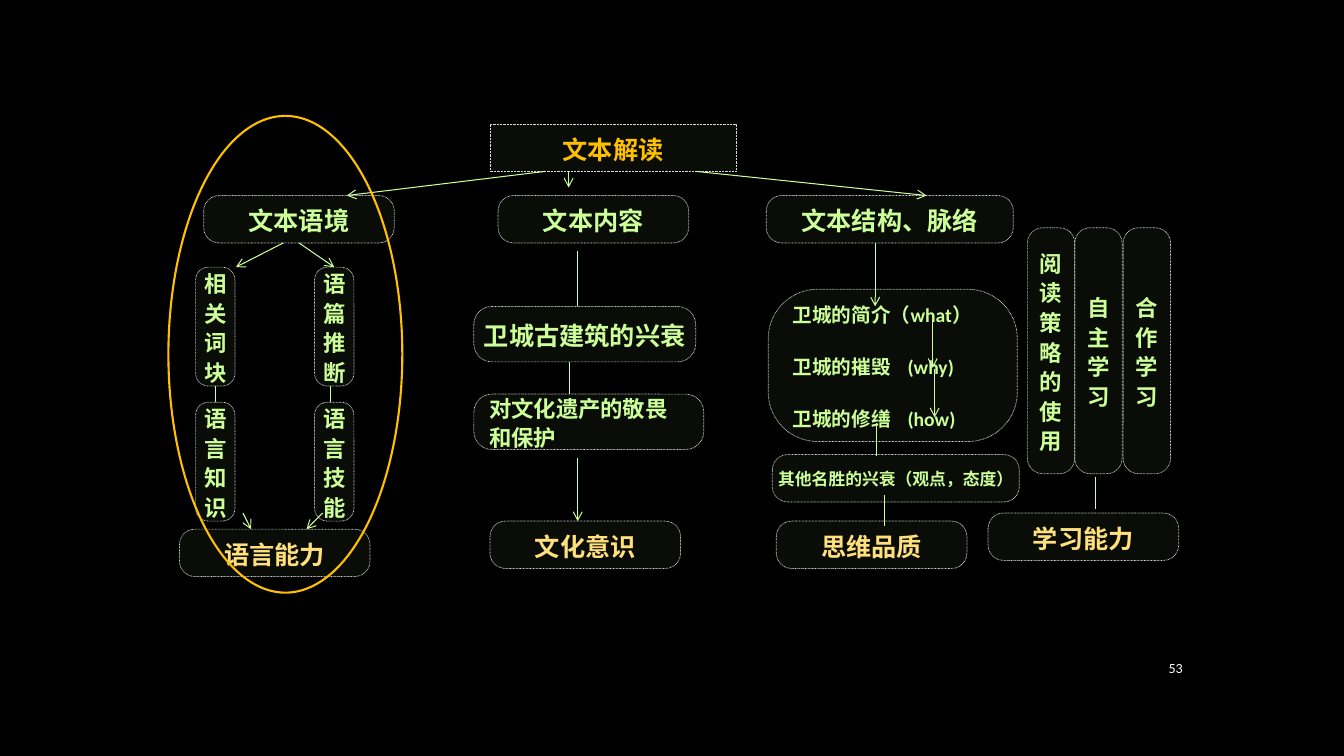
from dataclasses import dataclass
from typing import Any

from lxml.etree import SubElement
from pptx import Presentation
from pptx.dml.color import RGBColor
from pptx.enum.dml import MSO_LINE
from pptx.enum.shapes import MSO_CONNECTOR, MSO_SHAPE
from pptx.enum.text import MSO_ANCHOR, MSO_AUTO_SIZE, PP_ALIGN
from pptx.oxml.ns import qn
from pptx.util import Pt

PX = 9144  # EMU per px, 100 px to the inch
TOP, BOTTOM = 0, 2  # connection sites


@dataclass(frozen=True)
class Theme:
    font: str = "Calibri"
    back: str = "000000"
    green: str = "CCFF99"
    gold: str = "FFC000"
    pale: str = "FFE07D"
    border: str = "D9D9D9"
    white: str = "FFFFFF"
    head: int = 18
    item: int = 16
    step: int = 14
    note: int = 12
    number: int = 10


T = Theme()


def rgb(value):
    return RGBColor.from_string(value)


def px(*values):
    return [v * PX for v in values]


def write(tf, text, size=T.head, color=T.green, bold=True,
          align=PP_ALIGN.CENTER, spacing=1.1, gap=0, tab=None):
    """Fill a text frame, one paragraph for each line of text."""
    tf.word_wrap = False
    tf.auto_size = MSO_AUTO_SIZE.NONE
    tf.vertical_anchor = MSO_ANCHOR.MIDDLE
    for i, line in enumerate(text.split("\n")):
        p = tf.paragraphs[0] if i == 0 else tf.add_paragraph()
        p.alignment, p.line_spacing = align, spacing
        p.space_before = Pt(gap if i else 0)
        r = p.add_run()
        r.text = line
        r.font.name, r.font.size, r.font.bold = T.font, Pt(size), bold
        r.font.color.rgb = rgb(color)
        if tab:
            tabs = SubElement(p._p.get_or_add_pPr(), qn("a:tabLst"))
            SubElement(tabs, qn("a:tab"), pos=str(tab * PX), algn="l")


def style_node(sp):
    """Rounded, faintly tinted box with a dotted border."""
    sp.adjustments[0] = 0.324
    sp.shadow.inherit = False
    sp.fill.solid()
    sp.fill.fore_color.rgb = rgb(T.green)
    tint = sp._element.spPr.find(qn("a:solidFill"))[0]
    SubElement(tint, qn("a:alpha"), val="5000")
    sp.line.color.rgb = rgb(T.border)
    sp.line.width = Pt(0.5)
    sp.line.dash_style = MSO_LINE.ROUND_DOT


@dataclass
class Region:
    """Part of the slide whose contents are placed from its corner."""
    s: Any
    x: int
    y: int

    def node(self, text, x, y, w=189, h=47, **fmt):
        sp = self.s.shapes.add_shape(MSO_SHAPE.ROUNDED_RECTANGLE,
                                     *px(self.x + x, self.y + y, w, h))
        style_node(sp)
        write(sp.text_frame, text, **fmt)
        return sp

    def column(self, text, x, y, w, h):
        return self.node("\n".join(text), x, y, w, h, size=T.item)

    def link(self, x1, y1, x2, y2, arrow=False, begin=None, end=None):
        c = self.s.shapes.add_connector(
            MSO_CONNECTOR.STRAIGHT,
            *px(self.x + x1, self.y + y1, self.x + x2, self.y + y2))
        if begin:
            c.begin_connect(begin, BOTTOM)
        if end:
            c.end_connect(end, TOP)
        c.line.color.rgb = rgb(T.green)
        c.line.width = Pt(0.75)
        if arrow:
            SubElement(c.line._get_or_add_ln(), qn("a:tailEnd"), type="arrow")
        SubElement(c._element.spPr, qn("a:effectLst"))


# Root: slide title with arrows to the three branches
def add_root(s, x, y):
    sp = s.shapes.title
    sp.left, sp.top, sp.width, sp.height = px(x, y, 244, 47)
    geom = SubElement(sp._element.spPr, qn("a:prstGeom"), prst="roundRect")
    SubElement(geom, qn("a:avLst"))
    style_node(sp)
    write(sp.text_frame, "文本解读", color=T.gold)
    area = Region(s, x, y)
    for start, end, drop in ((55, -142, 71), (78, 78, 63), (204, 433, 71)):
        area.link(start, 47, end, drop, arrow=True)


# Content branch
def add_content(s, x, y):
    area = Region(s, x, y)
    area.node("文本内容", 24, 0)
    area.node("卫城古建筑的兴衰", 0, 110, 220, 55)
    area.node("对文化遗产的敬畏\n和保护", 0, 197, 228, 55,
              size=T.item, align=PP_ALIGN.LEFT)
    area.node("文化意识", 16, 323, color=T.pale)
    area.link(103, 55, 103, 110)
    area.link(95, 165, 95, 197)
    area.link(103, 260, 103, 323, arrow=True)


# Structure branch
def add_structure(s, x, y):
    area = Region(s, x, y)
    area.node("文本结构、脉络", 0, 0, w=245)
    area.node("思维品质", 10, 323, color=T.pale)
    area.link(108, 47, 108, 110, arrow=True)
    area.node("卫城的简介（what）\n卫城的摧毁\t(why)\n卫城的修缮\t(how)",
              2, 93, 247, 151, size=T.step, align=PP_ALIGN.LEFT,
              gap=18.5, tab=114)
    area.link(167, 172, 167, 220, arrow=True)
    area.link(165, 123, 165, 171, arrow=True)
    area.node("其他名胜的兴衰（观点，态度）", 6, 257, w=245, size=T.note)
    area.link(109, 226, 109, 258)
    area.link(117, 297, 117, 328)


# Learning strategies
def add_learning(s, x, y):
    area = Region(s, x, y)
    area.node("学习能力", 0, 283, color=T.pale)
    for i, text in enumerate(("阅读策略的使用", "自主学习", "合作学习")):
        area.column(text, 39 + 95 * i // 2, 0, 47, 244)
    area.link(107, 247, 107, 279)


# Language branch inside its highlight ring
def add_language(s, x, y):
    area = Region(s, x, y)
    context = area.node("文本语境", 35, 79)
    words, discourse, knowledge, skills = [
        area.column(text, 27 + 118 * (i % 2), 150 + 134 * (i // 2), 39, 118)
        for i, text in enumerate(("相关词块", "语篇推断", "语言知识", "语言技能"))]
    area.node("语言能力", 11, 410, color=T.pale)
    area.link(114, 126, 67, 150, arrow=True)
    area.link(130, 126, 165, 150, arrow=True, begin=context, end=discourse)
    area.link(47, 268, 47, 284, begin=words, end=knowledge)
    area.link(161, 268, 161, 284)
    area.link(74, 394, 82, 410, arrow=True)
    area.link(153, 394, 137, 410, arrow=True)
    ring = s.shapes.add_shape(MSO_SHAPE.OVAL, *px(x, y, 232, 473))
    ring.shadow.inherit = False
    ring.fill.background()
    ring.line.color.rgb = rgb(T.gold)
    ring.line.width = Pt(1.5)


# Page number
def add_number(s, x, y):
    tb = s.shapes.add_textbox(*px(x, y, 60, 41))
    write(tb.text_frame, "53", size=T.number, color=T.white, bold=False,
          align=PP_ALIGN.RIGHT, spacing=1.0)
    tb.text_frame.word_wrap = True


def main():
    prs = Presentation()
    prs.slide_width, prs.slide_height = px(1333, 750)
    s = prs.slides.add_slide(prs.slide_layouts[5])
    s.background.fill.solid()
    s.background.fill.fore_color.rgb = rgb(T.back)
    add_number(s, 1123, 642)
    add_root(s, 486, 123)
    add_content(s, 470, 194)
    add_structure(s, 760, 194)
    add_learning(s, 980, 226)
    add_language(s, 167, 115)
    prs.save("out.pptx")


if __name__ == "__main__":
    main()
